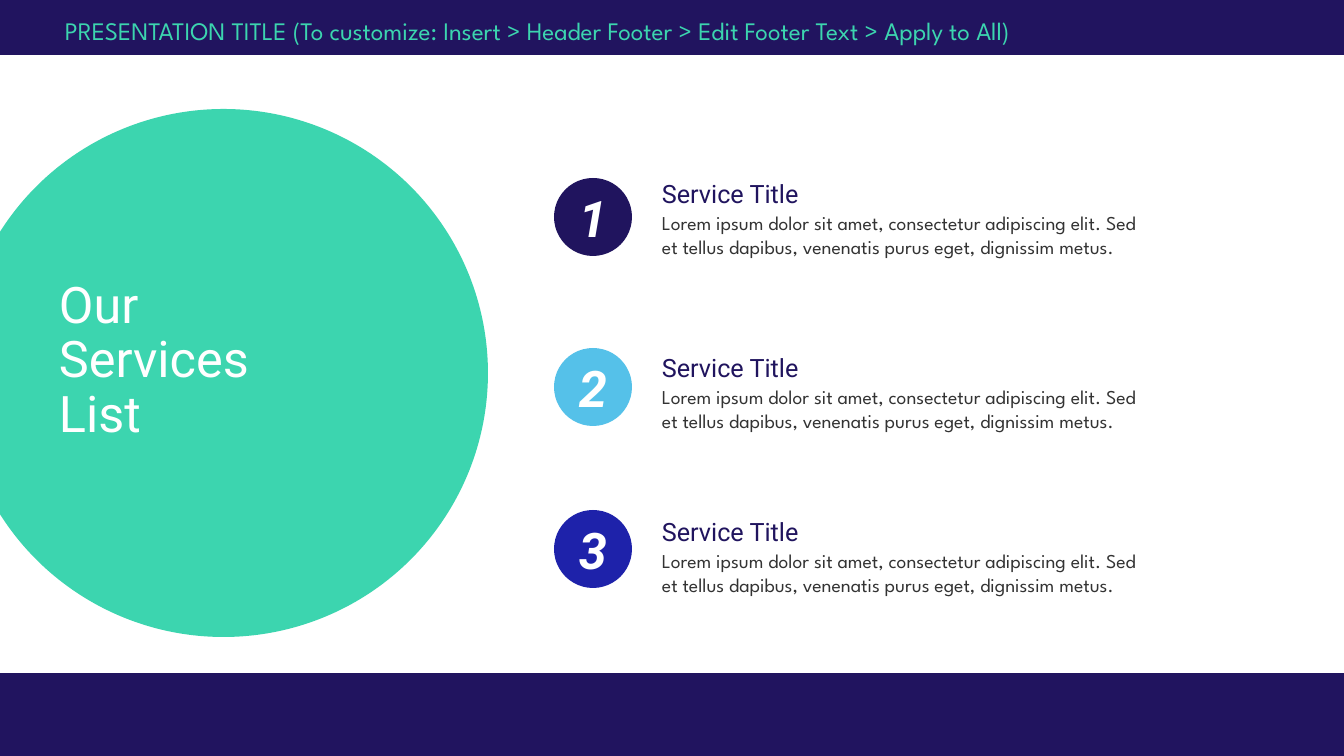
import dataclasses

import pptx
import pptx.dml.color
import pptx.enum.shapes
import pptx.enum.text
import pptx.util

EMU_PER_PX = 914400 / 100.8
SHAPES = pptx.enum.shapes.MSO_SHAPE
ANCHOR = pptx.enum.text.MSO_ANCHOR
ALIGN = pptx.enum.text.PP_ALIGN


@dataclasses.dataclass(frozen=True)
class Theme:
    bar: str = "21145F"
    navy: str = "20145E"
    sky: str = "55C1E9"
    blue: str = "1E22AA"
    mint: str = "3CD5AF"
    white: str = "FFFFFF"
    ink: str = "333333"
    heading_font: str = "Roboto"
    body_font: str = "League Spartan"
    display_size: int = 36
    heading_size: int = 18
    body_size: int = 14


def px(length):
    return pptx.util.Emu(round(length * EMU_PER_PX))


def rgb(code):
    return pptx.dml.color.RGBColor.from_string(code)


def write(frame, text, *, font, size, color, bold=False, italic=False,
          align=ALIGN.LEFT, anchor=ANCHOR.TOP, spacing=1.0, inset=(10, 5)):
    frame.word_wrap = True
    frame.vertical_anchor = anchor
    frame.margin_left = frame.margin_right = px(inset[0])
    frame.margin_top = frame.margin_bottom = px(inset[1])
    paragraph = frame.paragraphs[0]
    paragraph.text = text
    paragraph.alignment = align
    paragraph.line_spacing = spacing
    for run in paragraph.runs:
        run.font.name = font
        run.font.size = pptx.util.Pt(size)
        run.font.color.rgb = rgb(color)
        run.font.bold = bold
        run.font.italic = italic


class ServicesSlide:
    def __init__(self, presentation, theme):
        self.theme = theme
        self.slide = presentation.slides.add_slide(presentation.slide_layouts[6])

    def shape(self, kind, box, color):
        shape = self.slide.shapes.add_shape(kind, *map(px, box))
        shape.shadow.inherit = False
        shape.fill.solid()
        shape.fill.fore_color.rgb = rgb(color)
        shape.line.fill.background()
        return shape

    def text(self, box, text, **style):
        label = self.slide.shapes.add_textbox(*map(px, box))
        write(label.text_frame, text, **style)

    def marker(self, top, number, color):
        theme = self.theme
        circle = self.shape(SHAPES.OVAL, (554, top, 78, 78), color)
        write(circle.text_frame, str(number), font=theme.heading_font,
              size=theme.display_size, color=theme.white, bold=True,
              italic=True, align=ALIGN.CENTER, anchor=ANCHOR.MIDDLE)

    def service(self, number, marker_top, heading_top, color):
        theme = self.theme
        self.marker(marker_top, number, color)
        self.text((652, heading_top, 230, 40), "Service Title",
                  font=theme.heading_font, size=theme.heading_size,
                  color=theme.navy)
        self.text((662, heading_top + 33, 483, 82),
                  "Lorem ipsum dolor sit amet, consectetur adipiscing elit. "
                  "Sed et tellus dapibus, venenatis purus eget, dignissim metus.",
                  font=theme.body_font, size=theme.body_size,
                  color=theme.ink, inset=(0, 5))


def main():
    theme = Theme()
    presentation = pptx.Presentation()
    presentation.slide_width = px(1344)
    presentation.slide_height = px(756)

    page = ServicesSlide(presentation, theme)
    page.shape(SHAPES.RECTANGLE, (-18, -27, 1390, 82), theme.bar)
    page.shape(SHAPES.RECTANGLE, (0, 673, 1344, 83), theme.bar)
    page.shape(SHAPES.OVAL, (-41, 109, 529, 528), theme.mint)
    page.text((59, 263, 466, 197), "Our\vServices\vList",
              font=theme.heading_font, size=theme.display_size,
              color=theme.white, anchor=ANCHOR.MIDDLE, spacing=0.9,
              inset=(0, 0))
    page.text((55, 10, 1165, 40),
              "PRESENTATION TITLE (To customize: Insert > Header Footer > "
              "Edit Footer Text > Apply to All)",
              font=theme.body_font, size=theme.heading_size, color=theme.mint)

    services = [(178, 173, theme.navy), (348, 347, theme.sky),
                (510, 511, theme.blue)]
    for number, (marker_top, heading_top, color) in enumerate(services, 1):
        page.service(number, marker_top, heading_top, color)

    presentation.save("out.pptx")


if __name__ == "__main__":
    main()
